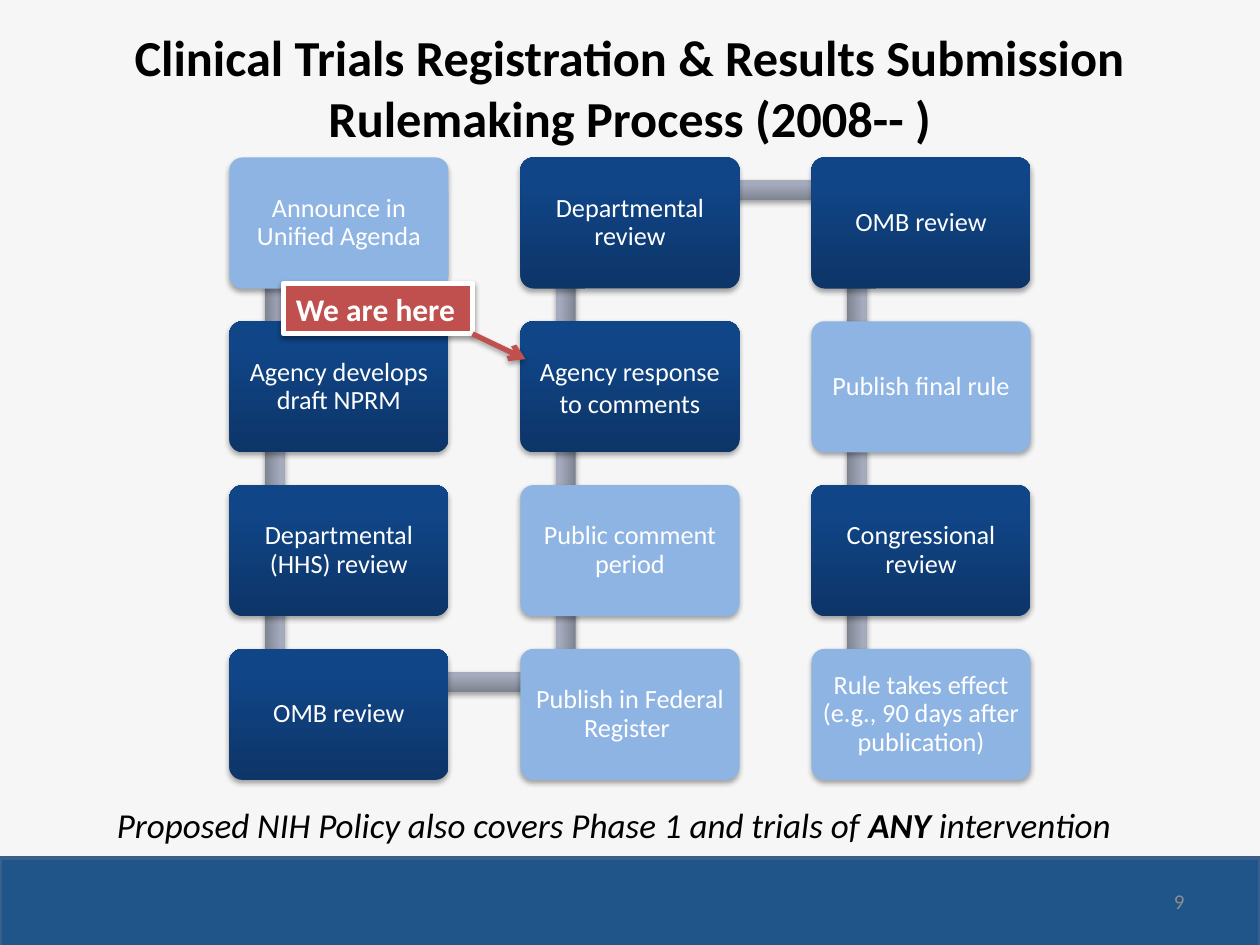
from dataclasses import dataclass
from itertools import pairwise
from math import atan2, degrees, hypot

from lxml.etree import SubElement
from pptx import Presentation
from pptx.dml.color import RGBColor
from pptx.enum.shapes import MSO_CONNECTOR as Connector, MSO_SHAPE as Shape
from pptx.enum.text import MSO_ANCHOR as Anchor, PP_ALIGN as Align
from pptx.oxml.ns import qn
from pptx.util import Inches, Pt


@dataclass(frozen=True)
class Theme:
    font: str = "Calibri"
    backdrop: str = "F6F6F6"
    footer: str = "20558A"
    footer_edge: str = "3A5F8C"
    ink: str = "000000"
    white: str = "FFFFFF"
    muted: str = "8C8C8C"
    public: str = "8EB4E3"
    accent: str = "C0504D"
    internal: tuple = ((0, "0D3568"), (80, "104587"), (100, "0E458A"))
    track: tuple = ((0, "7E8391"), (80, "A4ABBC"), (100, "A4ABBE"))
    title_size: float = 28.8
    note_size: float = 20
    marker_size: float = 18
    step_size: float = 15
    number_size: float = 12


THEME = Theme()

TITLE = "Clinical Trials Registration & Results Submission\nRulemaking Process (2008-- )"
POLICY_NOTE = [
    ("Proposed NIH Policy also covers Phase 1 and trials of ", False),
    ("ANY", True),
    (" intervention", False),
]
MARKER = "We are here"
PAGE_NUMBER = "9"
CURRENT_STEP = "Agency response to comments"
STEPS = [
    ("Announce in Unified Agenda", THEME.public),
    ("Agency develops draft NPRM", THEME.internal),
    ("Departmental (HHS) review", THEME.internal),
    ("OMB review", THEME.internal),
    ("Publish in Federal Register ", THEME.public),
    ("Public comment period", THEME.public),
    (CURRENT_STEP, THEME.internal),
    ("Departmental review", THEME.internal),
    ("OMB review", THEME.internal),
    ("Publish final rule", THEME.public),
    ("Congressional review", THEME.internal),
    ("Rule takes effect (e.g., 90 days after publication)", THEME.public),
]

ROWS = 4
GRID_LEFT, GRID_TOP = 1.82, 1.25
COLUMN_PITCH, ROW_PITCH = 2.31, 1.30
STEP_WIDTH, STEP_HEIGHT = 1.74, 1.04
TRACK_X, TRACK_Y, TRACK_WIDTH = 0.36, 0.26, 0.16


def rgb(value):
    return RGBColor.from_string(value)


def add_shadow(item, opacity=35, blur=3.1, distance=1.8):
    effects = SubElement(item._element.spPr, qn("a:effectLst"))
    outer = SubElement(effects, qn("a:outerShdw"), blurRad=str(Pt(blur)),
                       dist=str(Pt(distance)), dir="5400000", rotWithShape="0")
    tint = SubElement(outer, qn("a:srgbClr"), val=THEME.ink)
    SubElement(tint, qn("a:alpha"), val=str(opacity * 1000))


def paint(item, fill):
    if isinstance(fill, str):
        item.fill.solid()
        item.fill.fore_color.rgb = rgb(fill)
        return
    item.fill.gradient()
    item.fill.gradient_angle = 90
    gradient = item._element.spPr.find(qn("a:gradFill"))
    gradient.find(qn("a:lin")).set("ang", "16200000")
    stops = gradient.find(qn("a:gsLst"))
    stops.clear()
    for position, color in fill:
        stop = SubElement(stops, qn("a:gs"), pos=str(position * 1000))
        SubElement(stop, qn("a:srgbClr"), val=color)


def add_block(slide, kind, box, fill, edge=None, edge_width=0):
    block = slide.shapes.add_shape(kind, *map(Inches, box))
    paint(block, fill)
    if edge:
        block.line.color.rgb = rgb(edge)
        block.line.width = Pt(edge_width)
    else:
        block.line.fill.background()
    return block


def write(holder, text, size, color, align=Align.LEFT, anchor=Anchor.TOP,
          bold=False, italic=False, spacing=None, inset=None, wrap=True):
    frame = holder.text_frame
    frame.word_wrap = wrap
    frame.vertical_anchor = anchor
    if inset is not None:
        frame.margin_left = frame.margin_right = Inches(inset)
        frame.margin_top = frame.margin_bottom = Inches(inset)
    paragraph = frame.paragraphs[0]
    paragraph.alignment = align
    if spacing:
        paragraph.line_spacing = spacing
    parts = [(text, bold)] if isinstance(text, str) else text
    for words, heavy in parts:
        for index, line in enumerate(words.split("\n")):
            if index:
                paragraph.add_line_break()
            run = paragraph.add_run()
            run.text = line
            run.font.name = THEME.font
            run.font.size = Pt(size)
            run.font.color.rgb = rgb(color)
            run.font.bold = heavy
            run.font.italic = italic


def add_words(slide, box, text, **style):
    write(slide.shapes.add_textbox(*map(Inches, box)), text, **style)


def step_corner(index):
    column, place = divmod(index, ROWS)
    row = ROWS - 1 - place if column % 2 else place
    return GRID_LEFT + column * COLUMN_PITCH, GRID_TOP + row * ROW_PITCH


def add_track(slide, start, end):
    run_x, run_y = end[0] - start[0], end[1] - start[1]
    length = hypot(run_x, run_y)
    center_x = start[0] + run_x / 2 + TRACK_X
    center_y = start[1] + run_y / 2 + TRACK_Y
    box = (center_x - length / 2, center_y - TRACK_WIDTH / 2, length, TRACK_WIDTH)
    track = add_block(slide, Shape.RECTANGLE, box, THEME.track)
    track.rotation = degrees(atan2(run_y, run_x)) % 360
    add_shadow(track)


def add_step(slide, corner, label, fill):
    step = add_block(slide, Shape.ROUNDED_RECTANGLE,
                     (*corner, STEP_WIDTH, STEP_HEIGHT), fill)
    step.adjustments[0] = 0.1
    add_shadow(step)
    write(step, label, size=THEME.step_size, color=THEME.white, align=Align.CENTER,
          anchor=Anchor.MIDDLE, inset=0.06,
          spacing=None if label == CURRENT_STEP else 0.9)


def add_marker(slide):
    marker = add_block(slide, Shape.RECTANGLE, (2.25, 2.25, 1.5, 0.4),
                       THEME.accent, THEME.white, 3)
    add_shadow(marker, opacity=38, distance=1.6)
    write(marker, MARKER, size=THEME.marker_size, color=THEME.white, bold=True, wrap=False)
    pointer = slide.shapes.add_connector(
        Connector.STRAIGHT, *map(Inches, (3.75, 2.65, 4.17, 2.85)))
    pointer.line.color.rgb = rgb(THEME.accent)
    pointer.line.width = Pt(3)
    SubElement(pointer.line._get_or_add_ln(), qn("a:tailEnd"), type="arrow")
    add_shadow(pointer)


def main():
    deck = Presentation()
    deck.slide_width, deck.slide_height = Inches(10), Inches(7.5)
    slide = deck.slides.add_slide(deck.slide_layouts[6])
    slide.background.fill.solid()
    slide.background.fill.fore_color.rgb = rgb(THEME.backdrop)

    footer = add_block(slide, Shape.RECTANGLE, (0, 6.81, 10, 0.77),
                       THEME.footer, THEME.footer_edge, 2)
    footer.shadow.inherit = False
    add_words(slide, (0.5, 0.13, 9, 1.12), TITLE, size=THEME.title_size,
              color=THEME.ink, align=Align.CENTER, anchor=Anchor.MIDDLE, bold=True)

    corners = [step_corner(index) for index in range(len(STEPS))]
    for start, end in pairwise(corners):
        add_track(slide, start, end)
    for corner, (label, fill) in zip(corners, STEPS):
        add_step(slide, corner, label, fill)

    add_words(slide, (7.17, 6.95, 2.33, 0.4), PAGE_NUMBER, size=THEME.number_size,
              color=THEME.muted, align=Align.RIGHT, anchor=Anchor.MIDDLE)
    add_words(slide, (0.83, 6.33, 8.4, 0.44), POLICY_NOTE, size=THEME.note_size,
              color=THEME.ink, italic=True)
    add_marker(slide)
    deck.save("out.pptx")


if __name__ == "__main__":
    main()
